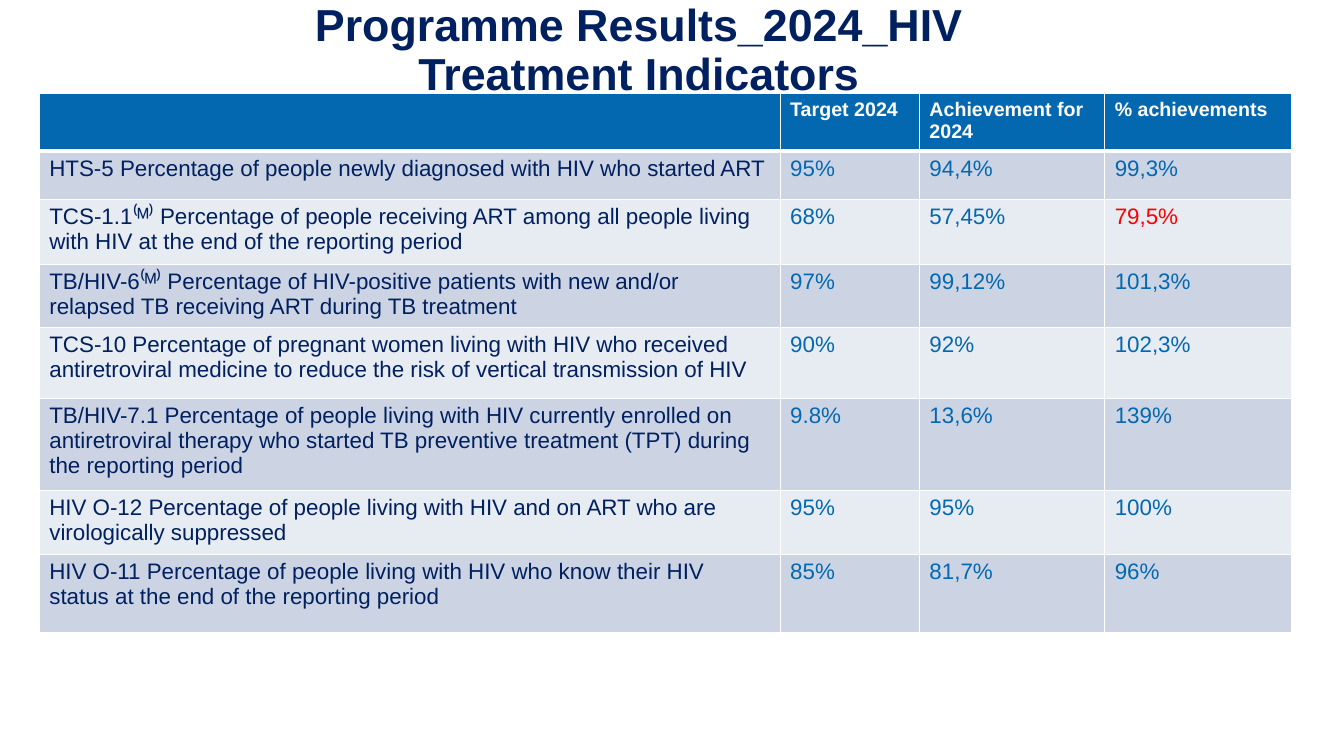
from lxml.etree import SubElement
from pptx import Presentation
from pptx.dml.color import RGBColor as RGB
from pptx.enum.text import MSO_ANCHOR as Anchor, MSO_AUTO_SIZE as AutoSize, PP_ALIGN as Align
from pptx.oxml import parse_xml
from pptx.oxml.ns import nsdecls, qn
from pptx.util import Cm, Pt

COLORS = {"navy": "002060", "blue": "0468B1", "red": "FF0000", "white": "FFFFFF",
          "band_dark": "CCD4E4", "band_light": "E7EBF2"}
TITLE = "Programme Results_2024_HIV\vTreatment Indicators"
COL_WIDTHS = [18.67, 3.51, 4.67, 4.7]
ROW_HEIGHTS = [1.45, 1.22, 1.63, 1.6, 1.78, 2.31, 1.63, 1.96]
HEADER = ["", "Target 2024", "Achievement for 2024", "% achievements"]
INDICATORS = [
    ["HTS-5 Percentage of people newly diagnosed with HIV who started ART",
     "95%", "94,4%", "99,3%"],
    ["TCS-1.1⁽ᴹ⁾ Percentage of people receiving ART among all people living with HIV "
     "at the end of the reporting period", "68%", "57,45%", "79,5%"],
    ["TB/HIV-6⁽ᴹ⁾ Percentage of HIV-positive patients with new and/or relapsed TB "
     "receiving ART during TB treatment", "97%", "99,12%", "101,3%"],
    ["TCS-10 Percentage of pregnant women living with HIV who received antiretroviral "
     "medicine to reduce the risk of vertical transmission of HIV", "90%", "92%", "102,3%"],
    ["TB/HIV-7.1 Percentage of people living with HIV currently enrolled on antiretroviral "
     "therapy who started TB preventive treatment (TPT) during the reporting period",
     "9.8%", "13,6%", "139%"],
    ["HIV O-12 Percentage of people living with HIV and on ART who are virologically "
     "suppressed", "95%", "95%", "100%"],
    ["HIV O-11 Percentage of people living with HIV who know their HIV status at the end "
     "of the reporting period", "85%", "81,7%", "96%"],
]
MISSED = "79,5%"


class Deck:
    font = "Arial"

    def __init__(self, width, height):
        self.prs = Presentation()
        self.prs.slide_width, self.prs.slide_height = Cm(width), Cm(height)
        self.s = self.prs.slides.add_slide(self.prs.slide_layouts[5])

    def style(self, p, size, color, bold=False):
        p.font.name = self.font
        p.font.size = Pt(size)
        p.font.bold = bold
        p.font.color.rgb = RGB.from_string(COLORS[color])

    def title(self, text, left, top, width, height):
        sp = self.s.shapes.title
        sp.left, sp.top, sp.width, sp.height = Cm(left), Cm(top), Cm(width), Cm(height)
        tf = sp.text_frame
        tf.text = text
        tf.word_wrap = True
        tf.auto_size = AutoSize.NONE
        tf.vertical_anchor = Anchor.BOTTOM
        p = tf.paragraphs[0]
        p.alignment = Align.CENTER
        p.line_spacing = 0.9
        self.style(p, 32, "navy", True)

    def borders(self, cell, top, bottom):
        tc_pr = cell._tc.get_or_add_tcPr()
        for i, (side, width) in enumerate(zip("LRTB", (1, 1, top, bottom))):
            ln = parse_xml(f'<a:ln{side} {nsdecls("a")} w="{Pt(width)}"/>')
            fill = SubElement(ln, qn("a:solidFill"))
            SubElement(fill, qn("a:srgbClr"), val=COLORS["white"])
            tc_pr.insert(i, ln)

    def cell(self, cell, text, fill, size, color, bold=False):
        cell.fill.solid()
        cell.fill.fore_color.rgb = RGB.from_string(COLORS[fill])
        cell.text = text
        self.style(cell.text_frame.paragraphs[0], size, color, bold)

    def table(self, header, rows, left, top, widths, heights):
        table = self.s.shapes.add_table(
            len(heights), len(widths), Cm(left), Cm(top),
            Cm(sum(widths)), Cm(sum(heights))).table
        for column, width in zip(table.columns, widths):
            column.width = Cm(width)
        for row, height in zip(table.rows, heights):
            row.height = Cm(height)
        for i, texts in enumerate([header] + rows):
            for j, text in enumerate(texts):
                cell = table.cell(i, j)
                if i == 0:
                    self.cell(cell, text, "blue", 14, "white", True)
                else:
                    color = "red" if text == MISSED else "blue" if j else "navy"
                    self.cell(cell, text, "band_dark" if i % 2 else "band_light", 16, color)
                self.borders(cell, 3 if i == 1 else 1, 3 if i == 0 else 1)


def main():
    deck = Deck(33.87, 19.05)
    deck.title(TITLE, 2.01, 0.58, 28.19, 2.06)
    deck.table(HEADER, INDICATORS, 0.99, 2.36, COL_WIDTHS, ROW_HEIGHTS)
    deck.prs.save("out.pptx")


if __name__ == "__main__":
    main()
